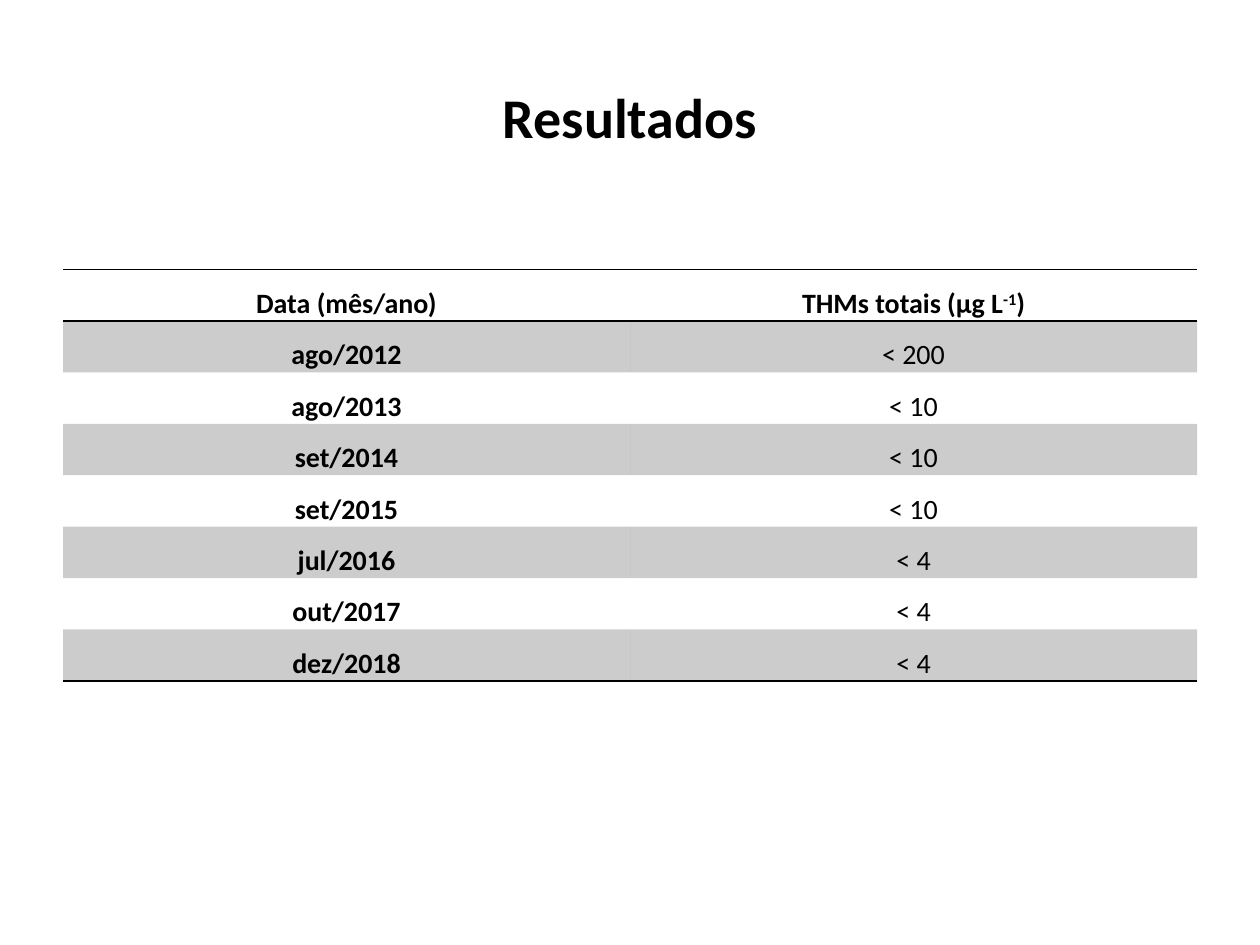
from dataclasses import dataclass

from pptx import Presentation
from pptx.dml.color import RGBColor
from pptx.enum.text import MSO_ANCHOR as Anchor, PP_ALIGN as Align
from pptx.oxml.ns import qn
from pptx.util import Pt
from lxml.etree import Element, SubElement

NO_GRID_STYLE = "{2D5ABB26-0587-4C30-8999-92F81FD0307C}"
SUPERSCRIPT = "30000"

HEADER = ([("Data (mês/ano)", False)],
          [("THMs totais (µg L", False), ("-1", True), (")", False)])
RESULTS = [("ago/2012", "< 200"), ("ago/2013", "< 10"), ("set/2014", "< 10"),
           ("set/2015", "< 10"), ("jul/2016", "< 4"), ("out/2017", "< 4"),
           ("dez/2018", "< 4")]


@dataclass(frozen=True)
class Theme:
    font: str = "Calibri"
    ink: RGBColor = RGBColor(0, 0, 0)
    band_alpha: str = "20000"
    title_size: int = 32
    table_size: int = 16
    rule: int = 1


THEME = Theme()


def add_run(p, text, size, bold, raised=False):
    r = p.add_run()
    r.text = text
    r.font.name, r.font.size, r.font.bold = THEME.font, Pt(size), bold
    r.font.color.rgb = THEME.ink
    if raised:
        r.font._element.set("baseline", SUPERSCRIPT)


def add_title(slide, box, text):
    sp = slide.shapes.title
    sp.left, sp.top, sp.width, sp.height = box
    tf = sp.text_frame
    tf.vertical_anchor = Anchor.MIDDLE
    p = tf.paragraphs[0]
    p.alignment = Align.CENTER
    add_run(p, text, THEME.title_size, True)


def fill_band(cell):
    cell.fill.solid()
    cell.fill.fore_color.rgb = THEME.ink
    color = cell._tc.tcPr.find(".//" + qn("a:srgbClr"))
    SubElement(color, qn("a:alpha")).set("val", THEME.band_alpha)


def add_rules(cell, sides):
    """Draw black edges; they must stand before the cell's fill."""
    tcPr = cell._tc.get_or_add_tcPr()
    for i, side in enumerate(sides):
        ln = Element(qn(f"a:ln{side}"), w=str(Pt(THEME.rule)))
        fill = SubElement(ln, qn("a:solidFill"))
        SubElement(fill, qn("a:srgbClr")).set("val", str(THEME.ink))
        tcPr.insert(i, ln)


def write_cell(cell, runs, bold):
    cell.vertical_anchor = Anchor.MIDDLE
    cell.margin_left = cell.margin_right = Pt(3.6)
    cell.margin_top = cell.margin_bottom = 0
    p = cell.text_frame.paragraphs[0]
    p.alignment, p.line_spacing = Align.CENTER, 1.5
    for text, raised in runs:
        add_run(p, text, THEME.table_size, bold, raised)


def add_results_table(slide, box):
    rows = [HEADER] + [[[(text, False)] for text in row] for row in RESULTS]
    last = len(rows) - 1
    table = slide.shapes.add_table(len(rows), len(HEADER), *box).table
    table.first_row = table.horz_banding = False
    table._tbl.tblPr.find(qn("a:tableStyleId")).text = NO_GRID_STYLE

    for i, row in enumerate(rows):
        for j, runs in enumerate(row):
            cell = table.cell(i, j)
            write_cell(cell, runs, bold=i == 0 or j == 0)
            if i % 2:
                fill_band(cell)
            else:
                cell.fill.background()
            # Rules above and below the header, and under the last row
            add_rules(cell, {0: "TB", last: "B"}.get(i, ""))


def main():
    prs = Presentation()
    prs.slide_width, prs.slide_height = Pt(720), Pt(540)
    slide = prs.slides.add_slide(prs.slide_layouts[5])
    add_title(slide, (Pt(36), Pt(21.6), Pt(648), Pt(90)), "Resultados")
    add_results_table(slide, (Pt(36), Pt(154.1), Pt(648), Pt(234.4)))
    prs.save("out.pptx")


if __name__ == "__main__":
    main()
